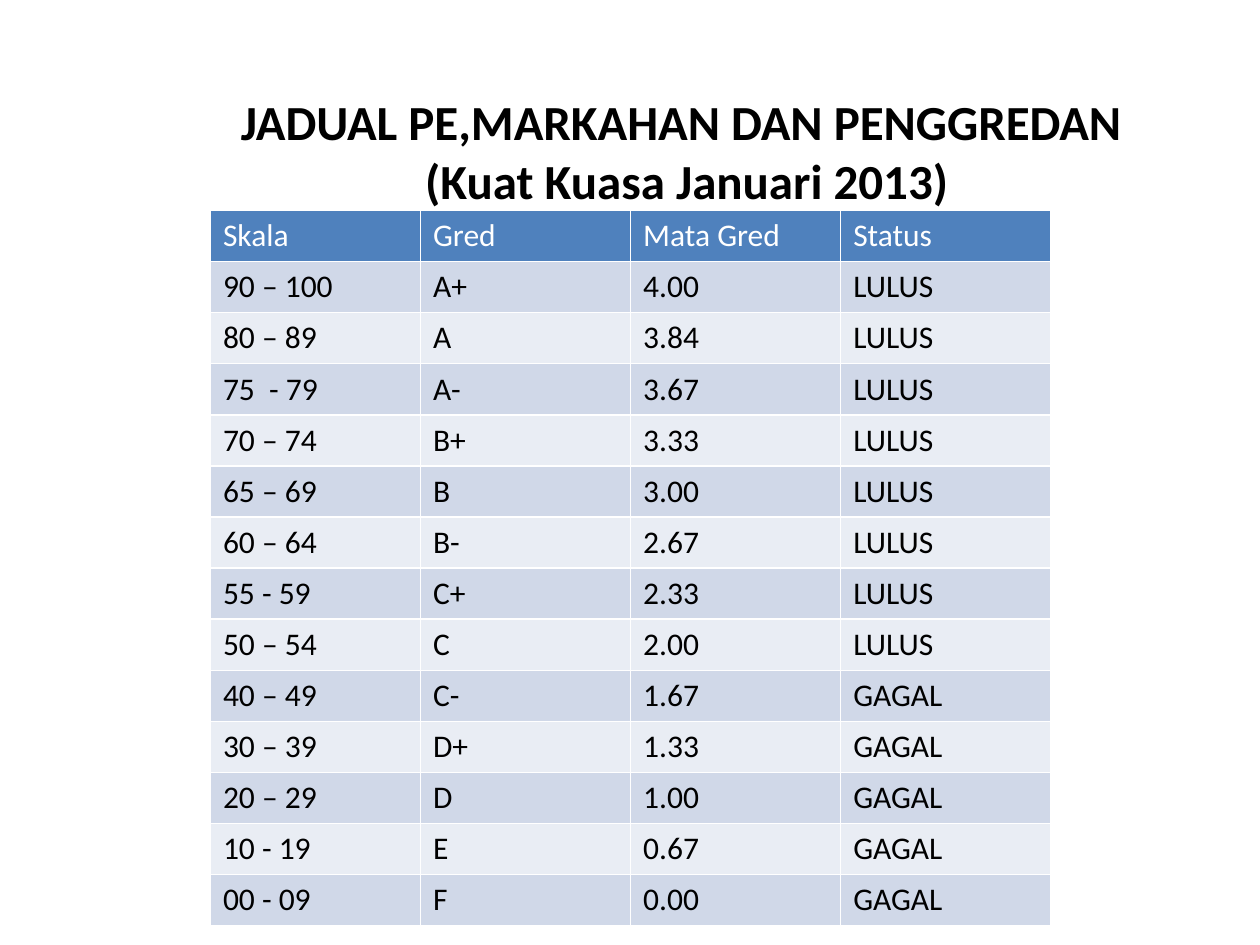
from pptx import Presentation
from pptx.dml.color import RGBColor
from pptx.enum.text import MSO_ANCHOR, PP_ALIGN
from pptx.util import Inches, Pt

HUES = {"head": "4F81BD", "odd": "D0D8E8", "even": "E9EDF4",
        "light": "FFFFFF", "dark": "000000"}
HEADS = ["Skala", "Gred", "Mata Gred", "Status"]
GRADES = [
    ("90 – 100", "A+", "4.00"),
    ("80 – 89", "A", "3.84"),
    ("75  - 79", "A-", "3.67"),
    ("70 – 74", "B+", "3.33"),
    ("65 – 69", "B", "3.00"),
    ("60 – 64", "B-", "2.67"),
    ("55 - 59", "C+", "2.33"),
    ("50 – 54", "C", "2.00"),
    ("40 – 49", "C-", "1.67"),
    ("30 – 39", "D+", "1.33"),
    ("20 – 29", "D", "1.00"),
    ("10 - 19", "E", "0.67"),
    ("00 - 09", "F", "0.00"),
]


def style(item, form):
    """Set each attribute in form on item."""
    for name, value in form.items():
        setattr(item, name, value)


def write(para, text, hue, size, bold):
    """Add a formatted run to a paragraph."""
    run = para.add_run()
    run.text = text
    style(run.font, {"name": "Calibri", "size": Pt(size), "bold": bold})
    run.font.color.rgb = RGBColor.from_string(HUES[hue])


def add_title(slide):
    """Place and fill the two-line title."""
    title = slide.shapes.title
    style(title, {"left": Inches(0), "top": Inches(0.62),
                  "width": Inches(10), "height": Inches(1.15)})
    title.text_frame.vertical_anchor = MSO_ANCHOR.MIDDLE
    para = title.text_frame.paragraphs[0]
    para.alignment = PP_ALIGN.CENTER
    props = para._p.get_or_add_pPr()
    props.set("marL", str(Inches(0.81)))
    props.set("indent", str(Inches(-0.81)))
    write(para, "\t", "dark", 28, False)
    write(para, "JADUAL PE,MARKAHAN DAN PENGGREDAN", "dark", 28, True)
    para.add_line_break()
    write(para, " (Kuat Kuasa Januari 2013)", "dark", 28, True)


def fill_cell(cell, text, back, hue):
    """Colour one cell and write its text."""
    cell.fill.solid()
    cell.fill.fore_color.rgb = RGBColor.from_string(HUES[back])
    write(cell.text_frame.paragraphs[0], text, hue, 18, False)


def add_grades(slide):
    """Build the grade table, with a pass from two points up."""
    rows = [HEADS] + [(*grade, "LULUS" if float(grade[2]) >= 2 else "GAGAL")
                      for grade in GRADES]
    table = slide.shapes.add_table(
        len(rows), len(HEADS), Inches(1.67), Inches(1.67),
        Inches(6.67), Inches(5.67)).table
    for i, row in enumerate(rows):
        back = "head" if i == 0 else "odd" if i % 2 else "even"
        hue = "light" if i == 0 else "dark"
        for j, text in enumerate(row):
            fill_cell(table.cell(i, j), text, back, hue)


def main():
    """Build and save the slide."""
    deck = Presentation()
    style(deck, {"slide_width": Inches(10), "slide_height": Inches(7.5)})
    slide = deck.slides.add_slide(deck.slide_layouts[5])
    add_title(slide)
    add_grades(slide)
    deck.save("out.pptx")


if __name__ == "__main__":
    main()
